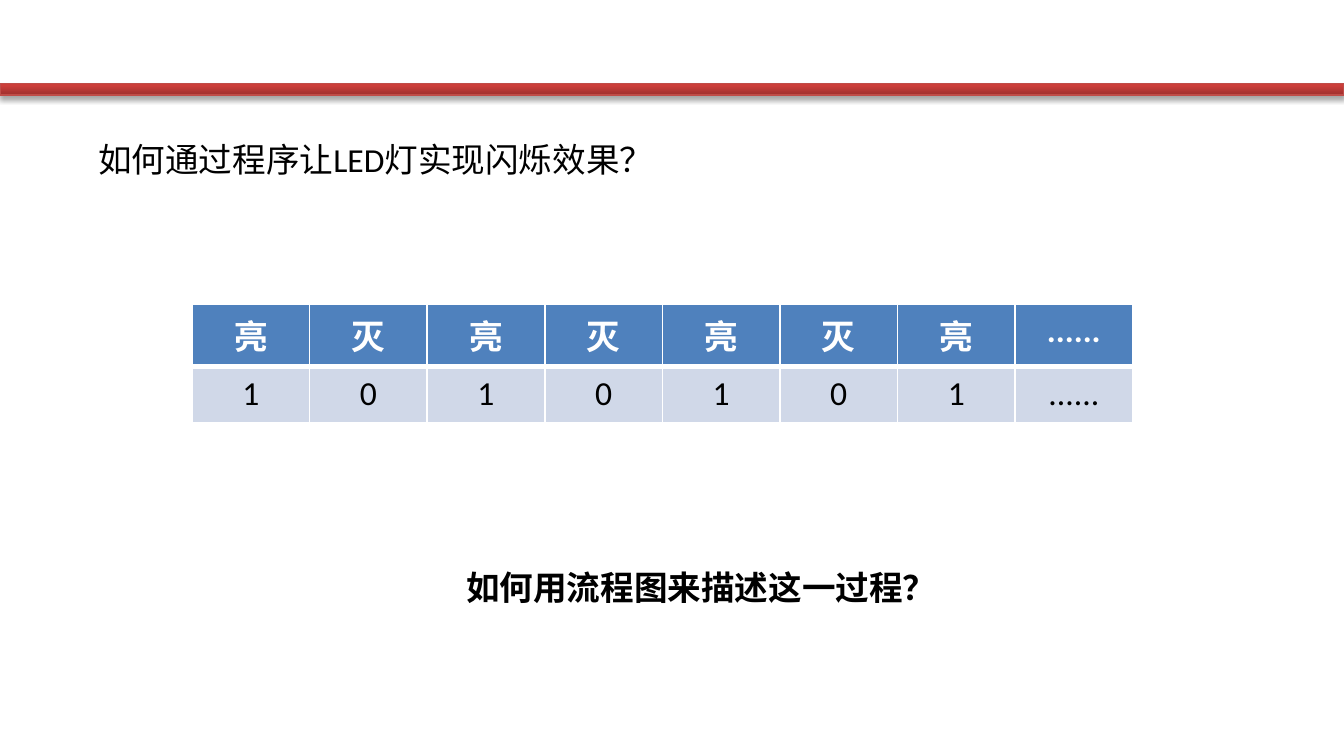
from lxml.etree import SubElement
from pptx import Presentation
from pptx.dml.color import RGBColor
from pptx.enum.shapes import MSO_SHAPE
from pptx.enum.text import MSO_ANCHOR, MSO_AUTO_SIZE, PP_ALIGN
from pptx.oxml import parse_xml
from pptx.oxml.ns import nsdecls, qn
from pptx.util import Cm, Pt

BLACK = RGBColor(0x00, 0x00, 0x00)
WHITE = RGBColor(0xFF, 0xFF, 0xFF)
BAR_DARK = RGBColor(0x9C, 0x2F, 0x2D)
BAR_LIGHT = RGBColor(0xCB, 0x3E, 0x3A)
BAR_EDGE = RGBColor(0xBF, 0x4C, 0x48)
HEADER_BLUE = RGBColor(0x4F, 0x81, 0xBD)
VALUE_GRAY = RGBColor(0xD0, 0xD8, 0xE8)

FONT = "Calibri"
SIZE = Pt(18)
STATES = ["亮", "灭"] * 3 + ["亮", "......"]
LEVELS = ["1", "0"] * 3 + ["1", "......"]


def style_runs(paragraph, color, bold=False):
    for run in paragraph.runs:
        run.font.name = FONT
        run.font.size = SIZE
        run.font.bold = bold
        run.font.color.rgb = color


def add_red_bar(slide, left, top, width, height):
    bar = slide.shapes.add_shape(MSO_SHAPE.RECTANGLE, left, top, width, height)
    bar.fill.gradient()
    bar.fill.gradient_angle = 90
    stops = zip(bar.fill.gradient_stops, (BAR_DARK, BAR_LIGHT), (0, 0.8))
    for stop, color, position in stops:
        stop.color.rgb = color
        stop.position = position
    bar.line.color.rgb = BAR_EDGE
    bar.line.width = Pt(0.75)
    bar.shadow.inherit = False
    effects = bar.element.spPr.find(qn("a:effectLst"))
    effects.append(parse_xml(
        f'<a:outerShdw {nsdecls("a")} blurRad="{Pt(3.1)}" dist="{Pt(1.8)}" '
        'dir="5400000" rotWithShape="0"><a:srgbClr val="000000">'
        '<a:alpha val="35000"/></a:srgbClr></a:outerShdw>'))


def fill_question(box, text, left, top, width, height, bold=False):
    box.left, box.top, box.width, box.height = left, top, width, height
    frame = box.text_frame
    frame.text = text
    frame.word_wrap = True
    frame.auto_size = MSO_AUTO_SIZE.NONE
    frame.vertical_anchor = MSO_ANCHOR.TOP
    frame.paragraphs[0].alignment = PP_ALIGN.LEFT
    style_runs(frame.paragraphs[0], BLACK, bold)


def set_borders(cell, bottom):
    """Give the cell white borders, 1 pt except at the bottom."""
    properties = cell._tc.get_or_add_tcPr()
    widths = {"a:lnL": 1, "a:lnR": 1, "a:lnT": 1, "a:lnB": bottom}
    for index, (side, width) in enumerate(widths.items()):
        line = SubElement(properties, qn(side), w=str(Pt(width)))
        fill = SubElement(line, qn("a:solidFill"))
        SubElement(fill, qn("a:srgbClr"), val=str(WHITE))
        properties.insert(index, line)


def add_state_table(slide, left, top, width, height):
    rows = [(STATES, HEADER_BLUE, WHITE, True, 3),
            (LEVELS, VALUE_GRAY, BLACK, False, 1)]
    table = slide.shapes.add_table(
        len(rows), len(STATES), left, top, width, height).table
    for r, (texts, fill, color, bold, bottom) in enumerate(rows):
        for c, text in enumerate(texts):
            cell = table.cell(r, c)
            cell.text = text
            cell.fill.solid()
            cell.fill.fore_color.rgb = fill
            set_borders(cell, bottom)
            paragraph = cell.text_frame.paragraphs[0]
            paragraph.alignment = PP_ALIGN.CENTER
            style_runs(paragraph, color, bold)


def main():
    presentation = Presentation()
    presentation.slide_width = Cm(25.4)
    presentation.slide_height = Cm(14.29)
    slide = presentation.slides.add_slide(presentation.slide_layouts[5])

    add_red_bar(slide, 0, Cm(1.58), presentation.slide_width, Cm(0.22))
    fill_question(slide.shapes.title, "如何通过程序让LED灯实现闪烁效果？",
                  Cm(1.6), Cm(2.49), Cm(11.13), Cm(0.76))
    closing_box = (Cm(8.56), Cm(10.59), Cm(17.78), Cm(0.76))
    closing_question = slide.shapes.add_textbox(*closing_box)
    fill_question(closing_question, "如何用流程图来描述这一过程？",
                  *closing_box, bold=True)
    add_state_table(slide, Cm(3.63), Cm(5.75), Cm(17.78), Cm(2.12))

    presentation.save("out.pptx")


if __name__ == "__main__":
    main()
